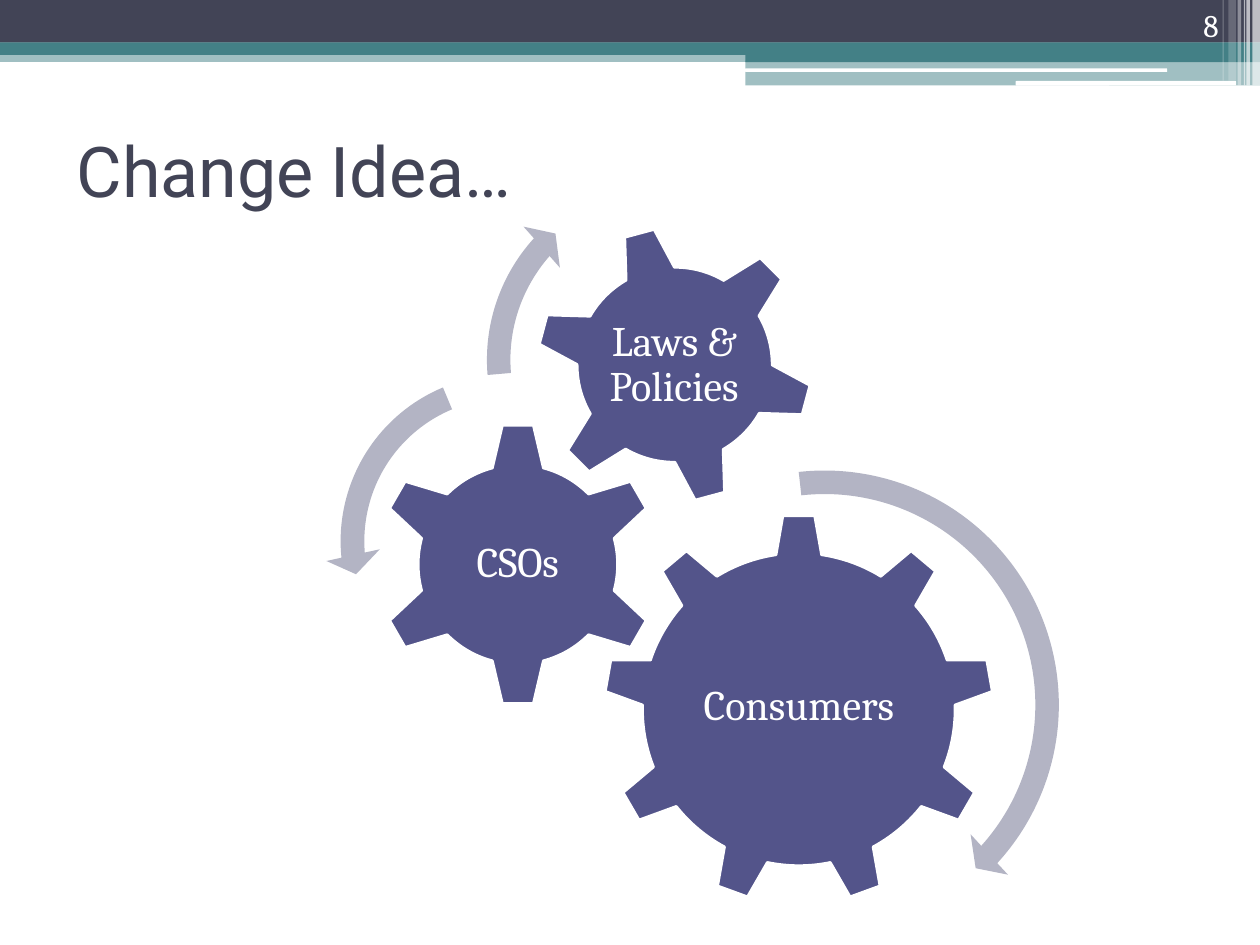
from pptx import Presentation
from pptx.dml.color import RGBColor
from pptx.enum.shapes import MSO_SHAPE
from pptx.enum.text import MSO_ANCHOR, PP_ALIGN
from pptx.oxml import parse_xml
from pptx.oxml.ns import nsdecls
from pptx.util import Pt

RECT, ROUND = MSO_SHAPE.RECTANGLE, MSO_SHAPE.ROUNDED_RECTANGLE
GEAR6, GEAR9 = MSO_SHAPE.GEAR_6, MSO_SHAPE.GEAR_9
RIGHT_ARC, LEFT_ARC = MSO_SHAPE.CIRCULAR_ARROW, MSO_SHAPE.LEFT_CIRCULAR_ARROW
MIDDLE, BOTTOM = MSO_ANCHOR.MIDDLE, MSO_ANCHOR.BOTTOM
LEFT, CENTER, RIGHT = PP_ALIGN.LEFT, PP_ALIGN.CENTER, PP_ALIGN.RIGHT

WHITE = RGBColor(0xFF, 0xFF, 0xFF)
NAVY = RGBColor(0x42, 0x44, 0x56)
TEAL = RGBColor(0x43, 0x80, 0x86)
INDIGO = RGBColor(0x53, 0x54, 0x8A)
GREY = RGBColor(0xB3, 0xB4, 0xC4)

deck = Presentation()
deck.slide_width, deck.slide_height = Pt(720), Pt(540)
slide = deck.slides.add_slide(deck.slide_layouts[6])


def add_form(kind, box, color, alpha=100, line=None):
    form = slide.shapes.add_shape(kind, *map(Pt, box))
    form.shadow.inherit = False
    form.fill.solid()
    form.fill.fore_color.rgb = color
    if alpha < 100:
        tint = form.fill._xPr.find(".//{*}srgbClr")
        tint.append(parse_xml(f'<a:alpha {nsdecls("a")} val="{alpha * 1000}"/>'))
    if line:
        form.line.color.rgb = line
        form.line.width = Pt(1.5)
    else:
        form.line.fill.background()
    return form


def add_text(text, box, size=24, font="Cambria", color=WHITE, align=CENTER,
             anchor=MIDDLE, inset=(7.2, 3.6), space=1.0):
    frame = slide.shapes.add_textbox(*map(Pt, box)).text_frame
    frame.word_wrap = True
    frame.vertical_anchor = anchor
    frame.margin_left = frame.margin_right = Pt(inset[0])
    frame.margin_top = frame.margin_bottom = Pt(inset[1])
    par = frame.paragraphs[0]
    par.alignment = align
    par.line_spacing = space
    run = par.add_run()
    run.text = text
    run.font.size = Pt(size)
    run.font.name = font
    run.font.color.rgb = color


bands = [
    (RECT, (0, 28.8, 720, 6.6), TEAL, 50),
    (RECT, (0, 0, 720, 24.4), NAVY, 100),
    (RECT, (0, 24.2, 720, 7.2), TEAL, 100),
    (RECT, (426, 28.3, 294, 7.2), TEAL, 100),
    (RECT, (426, 34.6, 294, 14.2), TEAL, 50),
    (ROUND, (425.8, 39.1, 241.2, 2), WHITE, 100),
    (ROUND, (580.4, 46.3, 126, 2.6), WHITE, 100),
]
for kind, box, color, alpha in bands:
    add_form(kind, box, color, alpha)

strips = [
    (715.6, 4.4, 48.8, 65),
    (712.2, 2, 48.8, 65),
    (710.8, 0.7, 48.8, 60),
    (707.2, 2, 48.8, 40),
    (702, 4.3, 46.1, 20),
    (698.6, 0.7, 46.1, 30),
]
for x, width, height, alpha in strips:
    add_form(RECT, (x, 0, width, height), WHITE, alpha)

add_text("Change Idea…", (36.7, 54.7, 648, 84.2), size=40, font="Roboto",
         color=NAVY, align=LEFT)

gears = [
    ("Consumers", GEAR9, (344.9, 293.8, 223.2, 223.2), 0, (389.5, 346.3, 133.9, 115.2)),
    ("CSOs", GEAR6, (214.6, 241.2, 162.7, 162.7), 0, (255.6, 282.2, 80.6, 80)),
    ("Laws & Policies", GEAR6, (306, 128.9, 159.1, 159.1), 345, (340.6, 164.2, 89.3, 89.3)),
]
for name, kind, box, turn, area in gears:
    gear = add_form(kind, box, INDIGO, line=WHITE)
    gear.rotation = turn
    add_text(name, area, inset=(2.2, 2.2), space=0.9)

arcs = [
    (RIGHT_ARC, (328.3, 259.9, 285.8), (0.047, 2.99, 25.353, 158.207, 0.055)),
    (LEFT_ARC, (185.8, 205.2, 208.1), (0.065, 4.3, 104.891, 148.378, 0.075)),
    (RIGHT_ARC, (269.3, 93.6, 223.9), (0.06, 3.941, 133.138, 105.082, 0.07)),
]
for kind, (x, y, side), values in arcs:
    arc = add_form(kind, (x, y, side, side), GREY)
    for i, value in enumerate(values):
        arc.adjustments[i] = value

add_text("8", (643.7, 0, 59.8, 28.8), size=18, align=RIGHT, anchor=BOTTOM)

deck.save("out.pptx")
